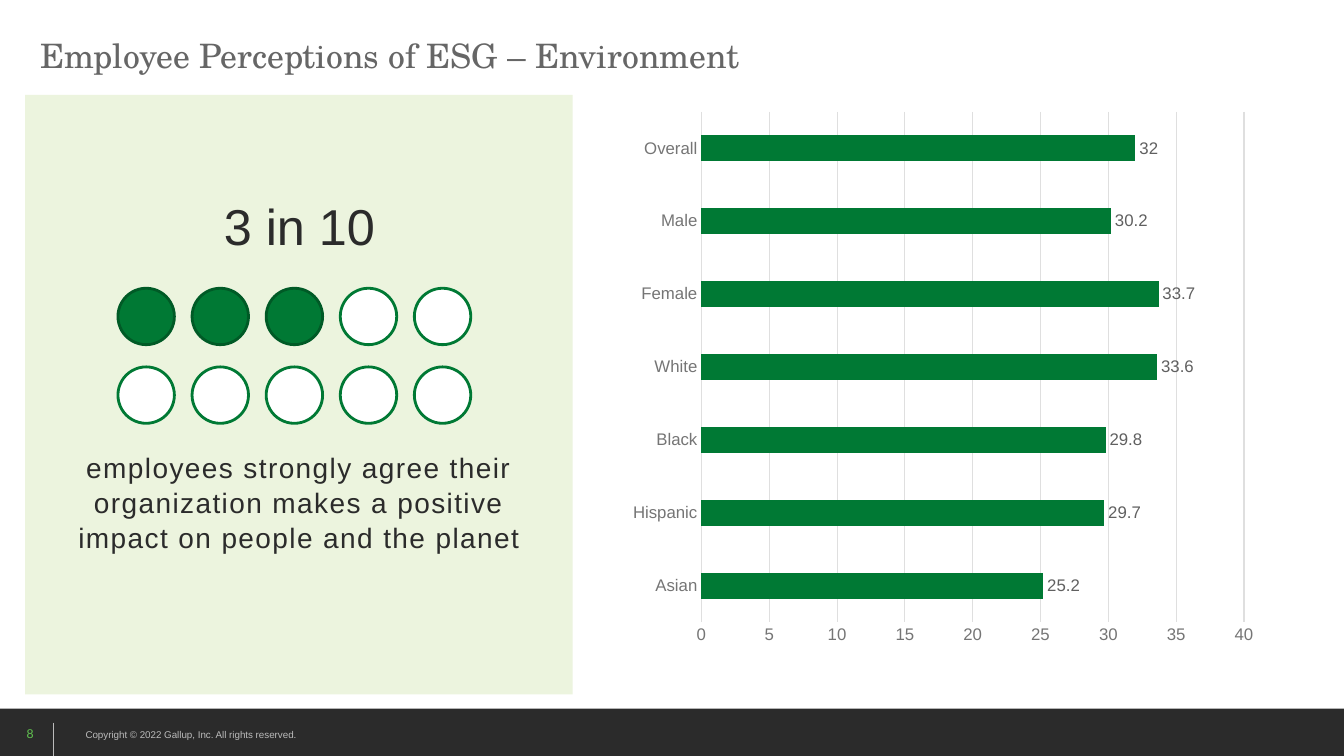
from lxml.etree import SubElement
from pptx import Presentation
from pptx.chart.data import CategoryChartData
from pptx.dml.color import RGBColor
from pptx.enum.chart import XL_CHART_TYPE as ChartType, XL_LABEL_POSITION as LabelPosition
from pptx.enum.chart import XL_TICK_MARK as TickMark
from pptx.enum.shapes import MSO_CONNECTOR as Connector, MSO_SHAPE as Shape
from pptx.enum.text import MSO_ANCHOR as Anchor, PP_ALIGN as Align
from pptx.oxml.ns import qn
from pptx.util import Inches, Pt

COLORS = {
    "green": "007934", "dark green": "005A26", "bright green": "61C250", "pale green": "ECF4DE",
    "white": "FFFFFF", "ink": "2B2B2B", "title": "666666", "axis": "757575",
    "label": "606060", "grid": "DFDFDF", "footer text": "BBBBBB",
}
RESULTS = {"Asian": 25.2, "Hispanic": 29.7, "Black": 29.8, "White": 33.6,
           "Female": 33.7, "Male": 30.2, "Overall": 32}


def rgb(name):
    return RGBColor.from_string(COLORS[name])


def set_font(font, size, color, name="Arial"):
    font.name, font.size, font.color.rgb = name, Pt(size), rgb(color)


def write(shape, text, size, color, font="Arial", align=Align.LEFT, anchor=Anchor.TOP,
          insets=(0.1, 0.05, 0.1, 0.05), line_spacing=1.0, tracking=0):
    """Fill a shape with one paragraph; insets are left, top, right, bottom in inches."""
    frame = shape.text_frame
    frame.word_wrap = True
    frame.vertical_anchor = anchor
    (frame.margin_left, frame.margin_top,
     frame.margin_right, frame.margin_bottom) = map(Inches, insets)
    paragraph = frame.paragraphs[0]
    paragraph.alignment = align
    paragraph.line_spacing = line_spacing
    run = paragraph.add_run()
    run.text = text
    set_font(run.font, size, color, font)
    if tracking:
        run.font._element.set("spc", str(tracking * 100))


class SlideBuilder:
    def __init__(self, presentation):
        self.slide = presentation.slides.add_slide(presentation.slide_layouts[6])
        self.shapes = self.slide.shapes

    def shape(self, kind, box, fill, line=None, weight=2):
        shape = self.shapes.add_shape(kind, *map(Inches, box))
        shape.shadow.inherit = False
        shape.fill.solid()
        shape.fill.fore_color.rgb = rgb(fill)
        if line:
            shape.line.color.rgb = rgb(line)
            shape.line.width = Pt(weight)
        else:
            shape.line.fill.background()
        return shape

    def text(self, box, text, **style):
        write(self.shapes.add_textbox(*map(Inches, box)), text, **style)

    def line(self, start, end, color, weight):
        line = self.shapes.add_connector(Connector.STRAIGHT, *map(Inches, start + end))
        line.line.color.rgb = rgb(color)
        line.line.width = Pt(weight)
        SubElement(line._element.spPr, qn("a:effectLst"))

    def dots(self, left, top, pitch_x, pitch_y, size, columns, total, filled):
        """Lay out a grid of circles, the first ones filled."""
        for index in range(total):
            row, column = divmod(index, columns)
            box = (left + column * pitch_x, top + row * pitch_y, size, size)
            fill, line = ("green", "dark green") if index < filled else ("white", "green")
            self.shape(Shape.OVAL, box, fill, line)

    def bar_chart(self, box, results):
        data = CategoryChartData()
        data.categories = list(results)
        data.add_series("Series 1", list(results.values()))
        chart = self.shapes.add_chart(ChartType.BAR_CLUSTERED, *map(Inches, box), data).chart
        chart.has_legend = chart.has_title = False
        set_font(chart.font, 10, "ink")

        for axis in (chart.category_axis, chart.value_axis):
            axis.major_tick_mark = axis.minor_tick_mark = TickMark.NONE
            set_font(axis.tick_labels.font, 12, "axis")
        category_axis, value_axis = chart.category_axis, chart.value_axis
        value_axis.minimum_scale, value_axis.maximum_scale = 0, 40
        value_axis.major_unit = 5
        value_axis.format.line.fill.background()
        for line in (category_axis.format.line, value_axis.major_gridlines.format.line):
            line.color.rgb = rgb("grid")
            line.width = Pt(0.75)

        plot = chart.plots[0]
        plot.gap_width = 182
        plot.vary_by_categories = False
        bars = plot.series[0]
        bars.format.fill.solid()
        bars.format.fill.fore_color.rgb = rgb("green")
        labels = bars.data_labels
        labels.show_value = True
        labels.position = LabelPosition.OUTSIDE_END
        set_font(labels.font, 12, "label")


def main():
    presentation = Presentation()
    presentation.slide_width, presentation.slide_height = Inches(13.33), Inches(7.5)
    builder = SlideBuilder(presentation)

    builder.shape(Shape.RECTANGLE, (0, 7.03, 13.33, 0.47), "ink")
    builder.line((0.53, 7.17), (0.53, 7.5), "footer text", 0.75)
    builder.text((0.75, 7.18, 3.75, 0.22), "Copyright © 2022 Gallup, Inc. All rights reserved.",
                 size=7, color="footer text", anchor=Anchor.MIDDLE)
    builder.text((0.08, 7.08, 0.44, 0.4), "8", size=9, color="bright green",
                 align=Align.CENTER, anchor=Anchor.MIDDLE)
    builder.text((0.3, 0.3, 12.78, 0.56), "Employee Perceptions of ESG – Environment",
                 size=24, color="title", font="TeX Gyre Schola")

    panel = builder.shape(Shape.RECTANGLE, (0.25, 0.94, 5.43, 5.95), "pale green")
    write(panel, "employees strongly agree their organization makes a positive "
                 "impact on people and the planet",
          size=20, color="ink", align=Align.CENTER, insets=(0.5, 3.52, 0.5, 0.2),
          line_spacing=1.04, tracking=1)
    builder.text((2.11, 1.89, 1.72, 0.7), "3 in 10", size=36, color="ink",
                 align=Align.CENTER, insets=(0, 0.05, 0, 0.05))
    builder.dots(left=1.17, top=2.86, pitch_x=0.735, pitch_y=0.78, size=0.56,
                 columns=5, total=10, filled=3)
    builder.bar_chart((6.15, 1, 6.41, 5.5), RESULTS)

    presentation.save("out.pptx")


if __name__ == "__main__":
    main()
